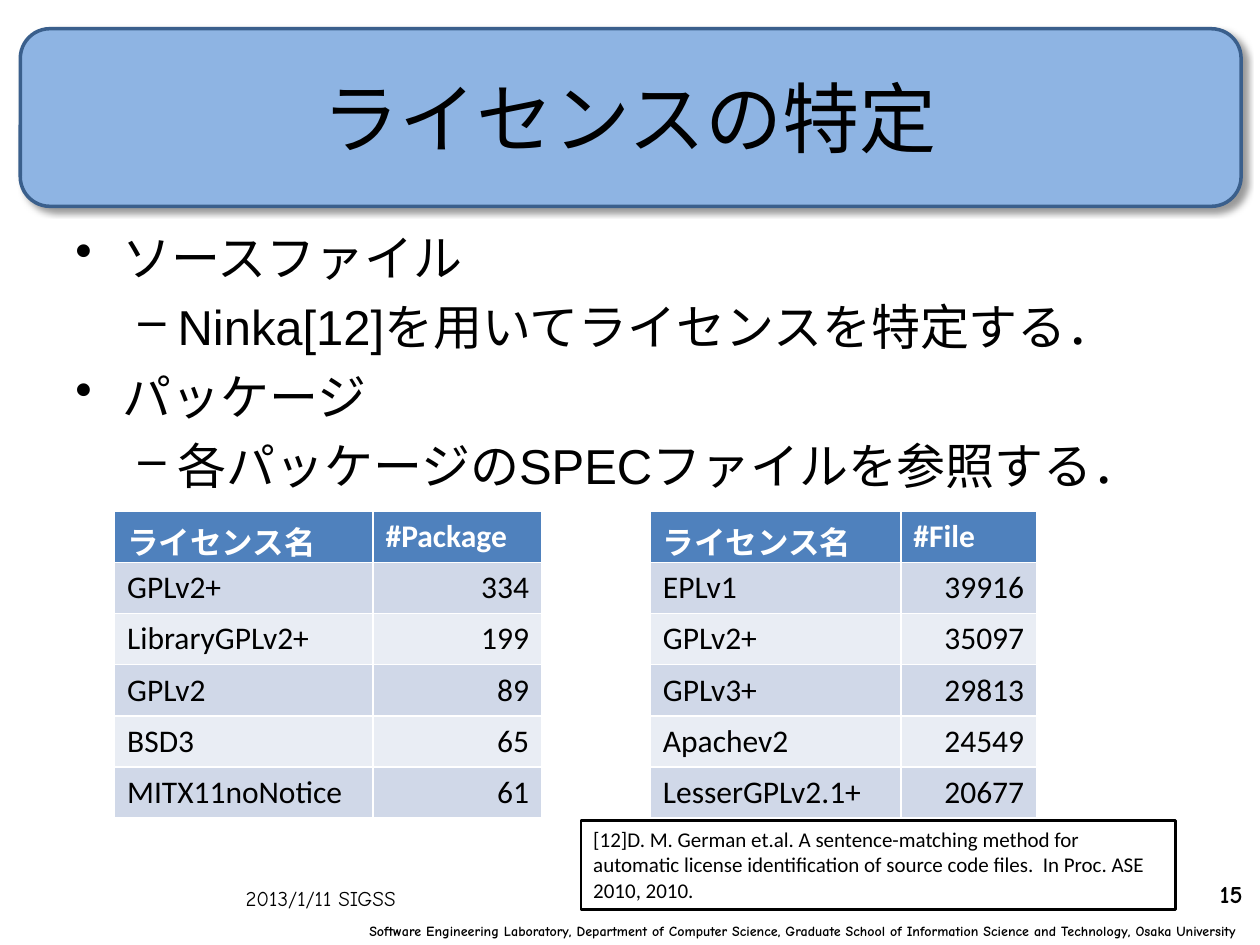
from dataclasses import dataclass

from lxml.etree import SubElement
from pptx import Presentation
from pptx.dml.color import RGBColor as RGB
from pptx.enum.shapes import MSO_SHAPE as SHAPE
from pptx.enum.text import MSO_ANCHOR as ANCHOR, PP_ALIGN as ALIGN
from pptx.oxml.ns import qn
from pptx.util import Cm, Pt


@dataclass(frozen=True)
class Theme:
    ink: str = "000000"
    paper: str = "FFFFFF"
    banner: str = "8EB4E3"
    banner_line: str = "3A5F8C"
    header: str = "4F81BD"
    bands: tuple = ("D0D8E8", "E9EDF4")
    cjk: str = "Noto Sans CJK JP"
    title: tuple = ("Noto Sans CJK JP", 44)
    body: tuple = ("Arial", 28)
    cell: tuple = ("Calibri", 18)
    cite: tuple = ("Calibri", 12)
    date: tuple = ("Comic Neue", 12)
    number: tuple = ("Comic Neue", 14)
    footer: tuple = ("Comic Neue", 8)


class Deck:
    """Draws styled elements on the current slide."""

    def __init__(self, theme):
        self.t = theme
        self.prs = Presentation()
        self.prs.slide_width, self.prs.slide_height = Cm(25.4), Cm(19.05)
        self.s = self.prs.slides.add_slide(self.prs.slide_layouts[6])

    def add_run(self, p, text, style, color=None, bold=False, align=ALIGN.LEFT):
        p.alignment = align
        r = p.add_run()
        r.text = text
        fmt = {"name": style[0], "size": Pt(style[1]), "bold": bold}
        for key, value in fmt.items():
            setattr(r.font, key, value)
        r.font.color.rgb = RGB.from_string(color or self.t.ink)
        SubElement(r._r.get_or_add_rPr(), qn("a:ea"), typeface=self.t.cjk)

    def text(self, box, text, style, anchor=ANCHOR.TOP, **fmt):
        tf = self.s.shapes.add_textbox(*map(Cm, box)).text_frame
        tf.word_wrap, tf.vertical_anchor = True, anchor
        self.add_run(tf.paragraphs[0], text, style, **fmt)

    def shape(self, kind, box, fill, line, width):
        sp = self.s.shapes.add_shape(kind, *map(Cm, box))
        sp.shadow.inherit = False
        sp.fill.solid()
        sp.fill.fore_color.rgb = RGB.from_string(fill)
        sp.line.color.rgb = RGB.from_string(line)
        sp.line.width = Pt(width)
        return sp

    def banner(self, box):
        t = self.t
        sp = self.shape(SHAPE.ROUNDED_RECTANGLE, box, t.banner, t.banner_line, 2)
        effects = sp._element.spPr.find(qn("a:effectLst"))
        shadow = SubElement(effects, qn("a:outerShdw"), blurRad=str(Pt(4)),
                            dist=str(Pt(3)), dir="2700000", rotWithShape="0")
        color = SubElement(shadow, qn("a:srgbClr"), val=t.ink)
        SubElement(color, qn("a:alpha"), val="40000")

    def citation(self, box, text):
        tf = self.shape(SHAPE.RECTANGLE, box, self.t.paper, self.t.ink, 1.5).text_frame
        tf.word_wrap, tf.vertical_anchor = True, ANCHOR.TOP
        self.add_run(tf.paragraphs[0], text, self.t.cite)

    def bullets(self, box, items):
        tf = self.s.shapes.add_textbox(*map(Cm, box)).text_frame
        tf.word_wrap = True
        marks = (("•", 0.95, -0.95), ("–", 2.06, -0.79))
        for i, (level, text) in enumerate(items):
            p = tf.add_paragraph() if i else tf.paragraphs[0]
            char, margin, indent = marks[level]
            pPr = p._p.get_or_add_pPr()
            pPr.set("marL", str(Cm(margin)))
            pPr.set("indent", str(Cm(indent)))
            SubElement(pPr, qn("a:buChar"), char=char)
            fmt = {"level": level, "line_spacing": Pt(34),
                   "space_before": Pt(5.6 if i else 0)}
            for key, value in fmt.items():
                setattr(p, key, value)
            self.add_run(p, text, self.t.body)

    def table(self, left, top, widths, rows, row_height=1.03):
        box = (left, top, sum(widths), row_height * len(rows))
        tbl = self.s.shapes.add_table(len(rows), len(widths), *map(Cm, box)).table
        for col, width in zip(tbl.columns, widths):
            col.width = Cm(width)
        for i, row in enumerate(rows):
            tbl.rows[i].height = Cm(row_height)
            fill = self.t.bands[(i - 1) % 2] if i else self.t.header
            for j, value in enumerate(row):
                cell = tbl.cell(i, j)
                cell.fill.solid()
                cell.fill.fore_color.rgb = RGB.from_string(fill)
                if i == 0:
                    cell.margin_bottom = 0
                self.add_run(cell.text_frame.paragraphs[0], str(value), self.t.cell,
                             color=None if i else self.t.paper, bold=i == 0,
                             align=ALIGN.RIGHT if i and j else ALIGN.LEFT)


def main():
    t = Theme()
    d = Deck(t)
    d.text((4.7, 18.47, 20.5, 0.58),
           "Software Engineering Laboratory, Department of Computer Science, "
           "Graduate School of Information Science and Technology, Osaka University",
           t.footer, bold=True, align=ALIGN.RIGHT)
    d.banner((0.41, 0.58, 24.61, 3.58))
    d.text((1.27, 0.76, 22.86, 3.18), "ライセンスの特定", t.title,
           anchor=ANCHOR.MIDDLE, align=ALIGN.CENTER)
    d.bullets((1.27, 4.45, 22.86, 12.57), [
        (0, "ソースファイル"),
        (1, "Ninka[12]を用いてライセンスを特定する．"),
        (0, "パッケージ"),
        (1, "各パッケージのSPECファイルを参照する．"),
    ])
    d.text((4.7, 17.73, 5.92, 0.61), "2013/1/11 SIGSS", t.date)
    d.text((24, 17.6, 1.3, 0.71), "15", t.number, bold=True, align=ALIGN.RIGHT)
    d.citation((11.71, 16.54, 11.99, 1.8),
               "[12]D. M. German et.al. A sentence-matching method for automatic "
               "license identification of source code files.  In Proc. ASE 2010, 2010.")
    d.table(2.31, 10.31, (5.21, 3.4), [
        ("ライセンス名", "#Package"), ("GPLv2+", 334), ("LibraryGPLv2+", 199),
        ("GPLv2", 89), ("BSD3", 65), ("MITX11noNotice", 61),
    ])
    d.table(13.11, 10.31, (5.05, 2.74), [
        ("ライセンス名", "#File"), ("EPLv1", 39916), ("GPLv2+", 35097),
        ("GPLv3+", 29813), ("Apachev2", 24549), ("LesserGPLv2.1+", 20677),
    ])
    d.prs.save("out.pptx")


if __name__ == "__main__":
    main()
